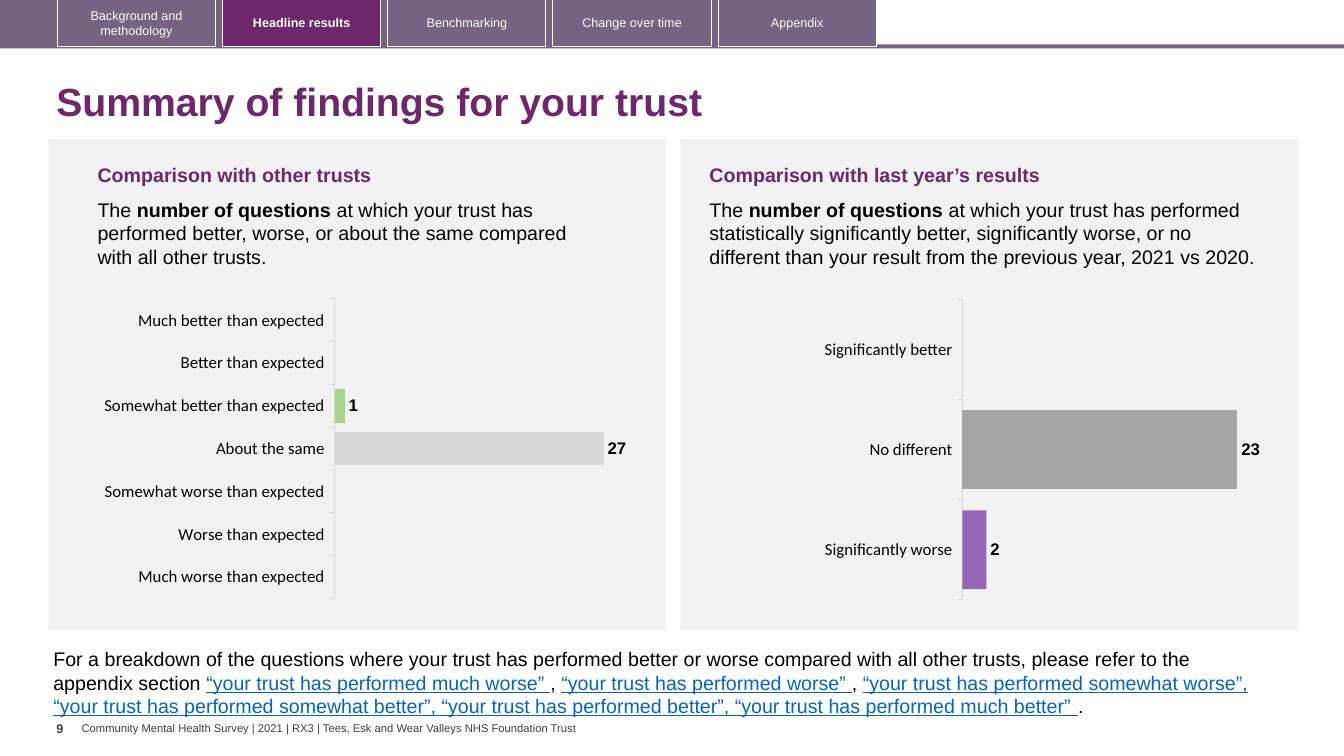
from lxml import etree
from pptx import Presentation
from pptx.chart.data import CategoryChartData
from pptx.dml.color import RGBColor
from pptx.enum.chart import XL_CHART_TYPE, XL_LABEL_POSITION, XL_TICK_LABEL_POSITION, XL_TICK_MARK
from pptx.enum.shapes import MSO_SHAPE
from pptx.enum.text import MSO_ANCHOR, PP_ALIGN
from pptx.oxml import parse_xml
from pptx.oxml.ns import nsdecls, qn
from pptx.util import Pt

RECT = MSO_SHAPE.RECTANGLE
TOP, MIDDLE = MSO_ANCHOR.TOP, MSO_ANCHOR.MIDDLE
BAR = XL_CHART_TYPE.BAR_CLUSTERED
OUT_END = XL_LABEL_POSITION.OUTSIDE_END
TICK_OUT, TICK_NONE = XL_TICK_MARK.OUTSIDE, XL_TICK_MARK.NONE
LABELS_LOW = XL_TICK_LABEL_POSITION.LOW

PURPLE = RGBColor(0x6D, 0x27, 0x6A)
MAUVE = RGBColor(0x75, 0x63, 0x82)
PANEL = RGBColor(0xF2, 0xF2, 0xF2)
AXIS = RGBColor(0xD9, 0xD9, 0xD9)
LINK = RGBColor(0x05, 0x63, 0xC1)
GREY = RGBColor(0x40, 0x40, 0x40)
BLACK = RGBColor(0, 0, 0)
WHITE = RGBColor(0xFF, 0xFF, 0xFF)

TITLE = "Summary of findings for your trust"
TABS = ["Background and methodology", "Headline results", "Benchmarking",
        "Change over time", "Appendix"]
CURRENT_TAB = "Headline results"
FOOTER = "Community Mental Health Survey | 2021 | RX3 | Tees, Esk and Wear Valleys NHS Foundation Trust"
PAGE = "9"
LEAD = ["The ", "number of questions "]

PANELS = [
    dict(x=34.5, text_x=62.6, text_w=360, chart_x=29.5, chart_y=195.8, top=30,
         heading="Comparison with other trusts",
         body="at which your trust has performed better, worse, or about the same "
              "compared with all other trusts.",
         bars=[("Much better than expected", None, "419999", 100),
               ("Better than expected", None, "5FBD83", 100),
               ("Somewhat better than expected", 1, "A9D18E", 100),
               ("About the same", 27, "D9D9D9", 100),
               ("Somewhat worse than expected", None, "FFD966", 100),
               ("Worse than expected", None, "F1BE48", 100),
               ("Much worse than expected", None, "E87722", 100)]),
    dict(x=486, text_x=499.7, text_w=407, chart_x=478, chart_y=196.6, top=25,
         heading="Comparison with last year’s results",
         body="at which your trust has performed statistically significantly better, "
              "significantly worse, or no different than your result from the previous "
              "year, 2021 vs 2020.",
         bars=[("Significantly better", None, "9DC3E6", 100),
               ("No different", 23, "A5A5A5", 100),
               ("Significantly worse", 2, "7030A0", 71)]),
]

BREAKDOWN = [
    ("For a breakdown of the questions where your trust has performed better or worse "
     "compared with all other trusts, please refer to the appendix section ", False),
    ("“your trust has performed much worse” ", True),
    (", ", False),
    ("“your trust has performed worse” ", True),
    (", ", False),
    ("“your trust has performed somewhat worse”, “your trust has performed somewhat "
     "better”, “your trust has performed better”, “your trust has performed much better” ", True),
    (".", False),
]

PLOT_BOX = {"x": 0.467, "y": 0.072, "w": 0.476, "h": 0.872}


def style(font, size, color, bold=False, name="Arial"):
    font.name, font.size, font.bold = name, Pt(size), bold
    font.color.rgb = color


def add_run(p, text, size, color, bold=False):
    r = p.add_run()
    r.text = text
    style(r.font, size, color, bold)
    return r


def add_rect(s, x, y, w, h, fill=None, line=None):
    sp = s.shapes.add_shape(RECT, Pt(x), Pt(y), Pt(w), Pt(h))
    sp.shadow.inherit = False
    if fill is None:
        sp.fill.background()
    else:
        sp.fill.solid()
        sp.fill.fore_color.rgb = fill
    if line is None:
        sp.line.fill.background()
    else:
        sp.line.color.rgb = line
        sp.line.width = Pt(0.75)
    return sp


def add_text(s, x, y, w, h, anchor=TOP, inset=7.2):
    tf = s.shapes.add_textbox(Pt(x), Pt(y), Pt(w), Pt(h)).text_frame
    tf.word_wrap = True
    tf.vertical_anchor = anchor
    tf.margin_left = tf.margin_right = Pt(inset)
    return tf.paragraphs[0]


def add_bars(s, panel):
    bars = panel["bars"]
    data = CategoryChartData(number_format="0")
    data.categories = [bar[0] for bar in bars]
    data.add_series("Series 1", [bar[1] for bar in bars])
    chart = s.shapes.add_chart(BAR, Pt(panel["chart_x"]), Pt(panel["chart_y"]),
                               Pt(448.6), Pt(245.5), data).chart
    chart.has_legend = chart.has_title = False
    style(chart.font, 10, BLACK, name="Calibri")

    cat = chart.category_axis
    cat.reverse_order = True
    cat.major_tick_mark, cat.minor_tick_mark = TICK_OUT, TICK_NONE
    cat.tick_label_position = LABELS_LOW
    cat.has_major_gridlines = False
    cat.format.line.color.rgb = AXIS
    cat.format.line.width = Pt(0.75)
    style(cat.tick_labels.font, 12, BLACK, name="Calibri")

    val = chart.value_axis
    val.minimum_scale, val.maximum_scale = 0, panel["top"]
    val.has_major_gridlines = False
    val.visible = False

    plot = chart.plots[0]
    plot.gap_width = 27
    plot.vary_by_categories = False
    series = plot.series[0]
    labels = series.data_labels
    labels.show_value = True
    labels.position = OUT_END
    style(labels.font, 12, BLACK, bold=True)
    for i, (_, _, color, opacity) in enumerate(bars):
        fill = series.points[i].format.fill
        fill.solid()
        fill.fore_color.rgb = RGBColor.from_string(color)
        if opacity < 100:
            clr = series.points[i].format.fill._xPr.find(".//" + qn("a:srgbClr"))
            etree.SubElement(clr, qn("a:alpha"), val=str(opacity * 1000))

    area = chart._chartSpace.find(".//" + qn("c:plotArea"))
    for old in area.findall(qn("c:layout")):
        area.remove(old)
    modes = "".join(f'<c:{k}Mode val="edge"/>' for k in "xy")
    sizes = "".join(f'<c:{k} val="{v}"/>' for k, v in PLOT_BOX.items())
    area.insert(0, parse_xml(
        f'<c:layout {nsdecls("c")}><c:manualLayout><c:layoutTarget val="inner"/>'
        f'{modes}{sizes}</c:manualLayout></c:layout>'))


def main():
    prs = Presentation()
    prs.slide_width, prs.slide_height = Pt(960), Pt(540)
    s = prs.slides.add_slide(prs.slide_layouts[6])

    add_rect(s, 0, 31.7, 960, 2.9, MAUVE)
    add_rect(s, 0, 0, 626.4, 33.8, MAUVE)
    for i, name in enumerate(TABS):
        current = name == CURRENT_TAB
        sp = add_rect(s, 41 + 118 * i, -0.7, 113, 33.8, PURPLE if current else None, WHITE)
        tf = sp.text_frame
        tf.word_wrap = True
        tf.vertical_anchor = MIDDLE
        p = tf.paragraphs[0]
        p.alignment = PP_ALIGN.CENTER
        add_run(p, name, 9, WHITE, current)

    p = add_text(s, 33.1, 48.2, 899, 51.8, MIDDLE)
    p.line_spacing = 0.9
    add_run(p, TITLE, 28, PURPLE, True)

    for panel in PANELS:
        add_rect(s, panel["x"], 99.4, 441.4, 350.6, PANEL)
        p = add_text(s, panel["text_x"], 113, 397, 24.5)
        add_run(p, panel["heading"], 14, PURPLE, True)
        p = add_text(s, panel["text_x"], 137.5, panel["text_w"], 58)
        for text, bold in zip(LEAD + [panel["body"]], (False, True, False)):
            add_run(p, text, 14, BLACK, bold)
        add_bars(s, panel)

    p = add_text(s, 31, 458.6, 879, 58)
    for text, linked in BREAKDOWN:
        r = add_run(p, text, 14, LINK if linked else BLACK)
        r.font.underline = linked

    add_run(add_text(s, 40.3, 511.2, 18, 28.8, inset=0), PAGE, 9, GREY, True)
    add_run(add_text(s, 58.3, 511.2, 400, 18, MIDDLE, 0), FOOTER, 8, GREY)
    prs.save("out.pptx")


if __name__ == "__main__":
    main()
